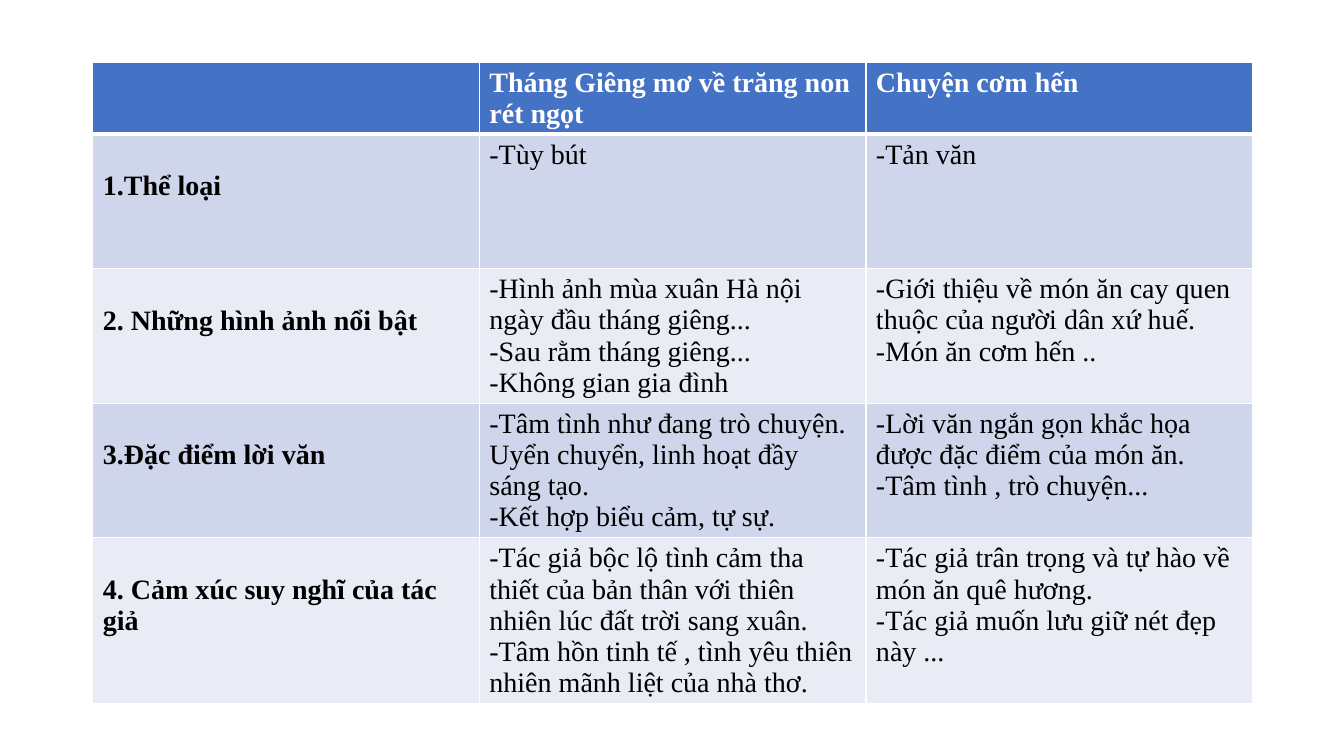
"""Build a slide with a table comparing two Vietnamese essays."""
from dataclasses import dataclass

from lxml.etree import SubElement
from pptx import Presentation
from pptx.dml.color import RGBColor as Rgb
from pptx.oxml.ns import qn
from pptx.table import _Cell as Cell
from pptx.util import Inches, Pt

COLORS = {"header": "4472C4", "odd": "CFD5EA", "even": "E9EBF5",
          "white": "FFFFFF", "black": "000000"}
FONT = "Times New Roman"
SLIDE_WIDTH, SLIDE_HEIGHT = Inches(13.33), Inches(7.5)
LEFT, TOP, WIDTH = 0.069, 0.082, 0.863
HEADER_SHARE = 0.095
LABEL_DROP = Inches(0.36)


@dataclass(frozen=True)
class Criterion:
    label: str
    first_essay: str
    second_essay: str
    height: float = 0.178


HEADINGS = ("", "Tháng Giêng mơ về trăng non rét ngọt", "Chuyện cơm hến")
CRITERIA = (
    Criterion("1.Thể loại", "-Tùy bút", "-Tản văn"),
    Criterion(
        "2. Những hình ảnh nổi bật",
        "-Hình ảnh mùa xuân Hà nội ngày đầu tháng giêng...\n"
        "-Sau rằm tháng giêng...\n"
        "-Không gian gia đình",
        "-Giới thiệu về món ăn cay quen thuộc của người dân xứ huế.\n"
        "-Món ăn cơm hến .."),
    Criterion(
        "3.Đặc điểm lời văn",
        "-Tâm tình như đang trò chuyện.\n"
        "Uyển chuyển, linh hoạt đầy sáng tạo.\n"
        "-Kết hợp biểu cảm, tự sự.",
        "-Lời văn ngắn gọn khắc họa được đặc điểm của món ăn.\n"
        "-Tâm tình , trò chuyện..."),
    Criterion(
        "4. Cảm xúc suy nghĩ của tác giả",
        "-Tác giả bộc lộ tình cảm tha thiết của bản thân với thiên nhiên "
        "lúc đất trời sang xuân.\n"
        "-Tâm hồn tinh tế , tình yêu thiên nhiên mãnh liệt của nhà thơ.",
        "-Tác giả trân trọng và tự hào về món ăn quê hương.\n"
        "-Tác giả muốn lưu giữ nét đẹp này ...",
        0.218),
)


def set_borders(cell: Cell, top: int, bottom: int) -> None:
    """Give the cell white edges, with top and bottom widths in points."""
    properties = cell._tc.get_or_add_tcPr()
    for edge, points in (("L", 1), ("R", 1), ("T", top), ("B", bottom)):
        line = SubElement(properties, qn(f"a:ln{edge}"), w=str(Pt(points)))
        SubElement(SubElement(line, qn("a:solidFill")), qn("a:srgbClr"),
                   val=COLORS["white"])


def fill_cell(cell: Cell, words: str, fill: str, ink: str, bold: bool) -> None:
    """Write the words in the cell and colour it."""
    cell.fill.solid()
    cell.fill.fore_color.rgb = Rgb.from_string(COLORS[fill])
    cell.text_frame.text = words
    for paragraph in cell.text_frame.paragraphs:
        paragraph.font.size = Pt(20)
        for run in paragraph.runs:
            run.font.name, run.font.size, run.font.bold = FONT, Pt(20), bold
            run.font.color.rgb = Rgb.from_string(COLORS[ink])


def main() -> None:
    """Create the presentation and save it."""
    deck = Presentation()
    deck.slide_width, deck.slide_height = SLIDE_WIDTH, SLIDE_HEIGHT
    slide = deck.slides.add_slide(deck.slide_layouts[6])
    rows = [HEADINGS] + [(c.label, c.first_essay, c.second_essay)
                         for c in CRITERIA]
    shares = [HEADER_SHARE] + [c.height for c in CRITERIA]
    comparison = slide.shapes.add_table(
        len(rows), len(HEADINGS), int(SLIDE_WIDTH * LEFT),
        int(SLIDE_HEIGHT * TOP), int(SLIDE_WIDTH * WIDTH),
        int(SLIDE_HEIGHT * sum(shares))).table

    for r, (entries, share) in enumerate(zip(rows, shares)):
        comparison.rows[r].height = int(SLIDE_HEIGHT * share)
        header = r == 0
        fill = "header" if header else "odd" if r % 2 else "even"
        for c, words in enumerate(entries):
            cell = comparison.cell(r, c)
            set_borders(cell, 3 if r == 1 else 1, 3 if header else 1)
            fill_cell(cell, words, fill, "white" if header else "black",
                      header or c == 0)
            if c == 0 and not header:
                cell.margin_top = LABEL_DROP

    deck.save("out.pptx")


if __name__ == "__main__":
    main()
